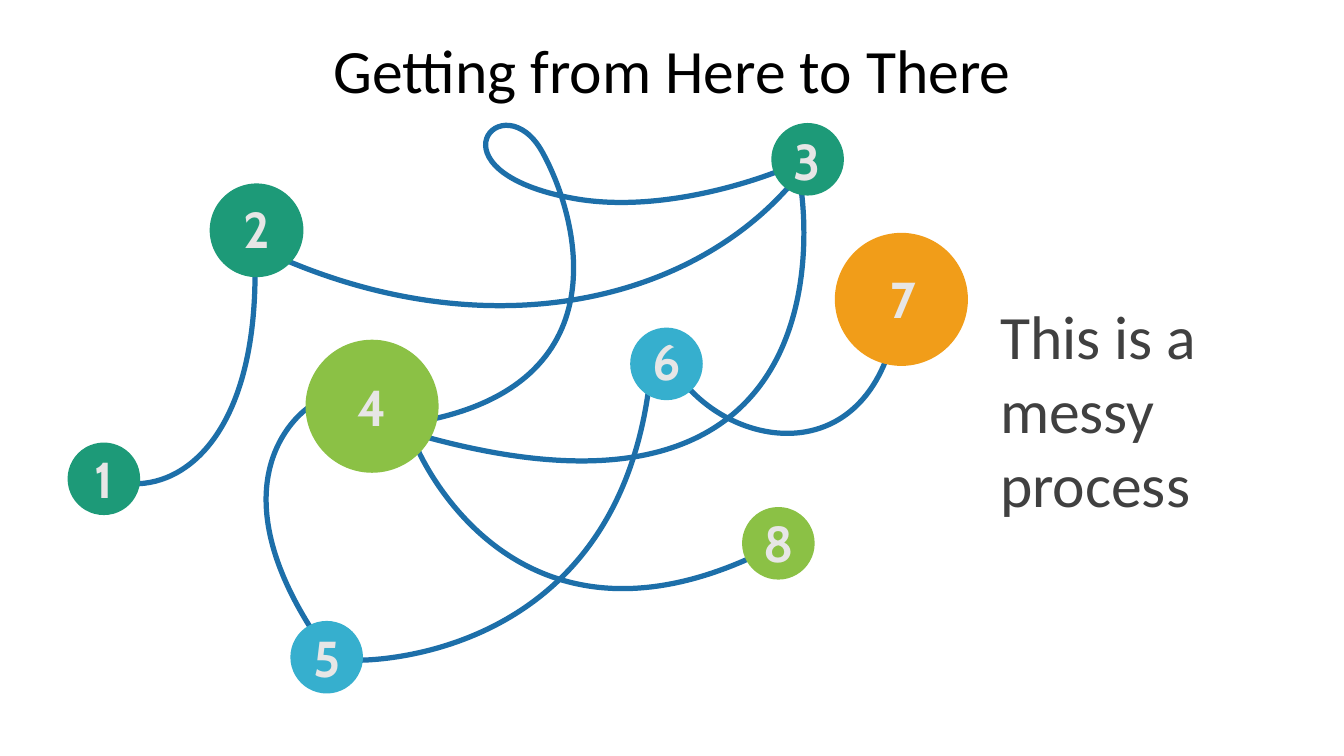
from lxml.etree import SubElement
from pptx import Presentation
from pptx.dml.color import RGBColor
from pptx.enum.shapes import MSO_SHAPE
from pptx.enum.text import MSO_ANCHOR, PP_ALIGN
from pptx.oxml.ns import qn
from pptx.util import Inches, Pt

TEAL, SKY, LIME, ORANGE = "1D9A78", "36AFCE", "8BC145", "F19D19"


def color(code):
    return RGBColor.from_string(code)


def add_text(bounds, text, font, size, code, align, bold=False):
    box = page.shapes.add_textbox(*map(Inches, bounds))
    box.text_frame.word_wrap = True
    box.text_frame.vertical_anchor = MSO_ANCHOR.MIDDLE
    para = box.text_frame.paragraphs[0]
    para.alignment = align
    span = para.add_run()
    span.text = text
    span.font.name = font
    span.font.size = Pt(size)
    span.font.bold = bold
    span.font.color.rgb = color(code)
    return box.text_frame


deck = Presentation()
deck.slide_width, deck.slide_height = Inches(13.33), Inches(7.5)
page = deck.slides.add_slide(deck.slide_layouts[6])

# Bounds of each route, then its start and two controls and an end per curve
routes = [
    ((4.12, 4.41, 3.39, 1.44), [(4.12, 4.41), (4.12, 4.41), (5.03, 6.68), (7.52, 5.5)]),
    ((4.24, 1.84, 3.74, 2.73), [(7.94, 1.84), (7.94, 1.84), (8.58, 5.52), (4.24, 4.34)]),
    ((2.76, 1.8, 5.11, 1.24), [(2.76, 2.55), (4.81, 3.45), (6.83, 3.03), (7.87, 1.8)]),
    ((1.32, 2.71, 1.21, 2.09), [(1.32, 4.8), (1.91, 4.81), (2.53, 4.2), (2.53, 2.71)]),
    ((4.28, 1.24, 3.47, 2.92), [(4.28, 4.16), (6.17, 3.75), (5.73, 2.14), (5.38, 1.51),
                                (4.99, 0.8), (4.19, 1.7), (5.7, 1.97),
                                (6.66, 2.14), (7.74, 1.69), (7.74, 1.69)]),
    ((2.64, 4.05, 0.48, 2.24), [(3.05, 4.05), (3.05, 4.05), (2.08, 4.7), (3.12, 6.29)]),
    ((6.83, 3.45, 2, 0.85), [(6.83, 3.85), (7.38, 4.45), (8.48, 4.57), (8.83, 3.45)]),
    ((3.54, 3.81, 2.9, 2.75), [(3.54, 6.55), (3.54, 6.55), (6.09, 6.61), (6.44, 3.81)]),
]
for (left, top, width, height), points in routes:
    # The diagonal sets the bounds; cubic curves then take its place
    builder = page.shapes.build_freeform(Inches(left), Inches(top))
    builder.add_line_segments([(Inches(left + width), Inches(top + height))], close=False)
    curve = builder.convert_to_shape()
    curve.shadow.inherit = False
    curve.fill.background()
    curve.line.color.rgb = color("1D6FA9")
    curve.line.width = Pt(3.75)
    outline = curve._element.find(".//" + qn("a:path"))
    for segment in list(outline):
        outline.remove(segment)
    for index, (x, y) in enumerate(points):
        if index == 0:
            segment = SubElement(outline, qn("a:moveTo"))
        elif index % 3 == 1:
            segment = SubElement(outline, qn("a:cubicBezTo"))
        SubElement(segment, qn("a:pt"), x=str(int(Inches(x - left))),
                   y=str(int(Inches(y - top))))

title = add_text((0.92, 0, 11.5, 1.45), "Getting from Here to There", "Calibri", 44,
                 "000000", PP_ALIGN.CENTER)
title.paragraphs[0].line_spacing = 0.9

# Number, circle left, top and size, fill, label bounds
stops = [
    ("1", 0.67, 4.39, 0.72, TEAL, (0.8, 4.5, 0.46, 0.5)),
    ("2", 2.08, 1.82, 0.93, TEAL, (2.27, 1.99, 0.56, 0.55)),
    ("3", 7.65, 1.22, 0.72, TEAL, (7.78, 1.34, 0.46, 0.5)),
    ("4", 3.03, 3.37, 1.32, LIME, (3.46, 3.78, 0.46, 0.5)),
    ("5", 2.88, 6.16, 0.72, SKY, (3.01, 6.27, 0.46, 0.5)),
    ("6", 6.25, 3.25, 0.72, SKY, (6.38, 3.33, 0.46, 0.5)),
    ("7", 8.28, 2.31, 1.32, ORANGE, (8.73, 2.71, 0.46, 0.5)),
    ("8", 7.36, 5.03, 0.72, LIME, (7.49, 5.13, 0.46, 0.5)),
]
for number, left, top, size, fill, label_bounds in stops:
    stop = page.shapes.add_shape(MSO_SHAPE.OVAL, Inches(left), Inches(top),
                                 Inches(size), Inches(size))
    stop.shadow.inherit = False
    stop.fill.solid()
    stop.fill.fore_color.rgb = color(fill)
    stop.line.fill.background()
    label = add_text(label_bounds, number, "Cabin", 36, "E7E6E6", PP_ALIGN.CENTER, bold=True)
    label.margin_left = label.margin_right = label.margin_top = label.margin_bottom = 0

add_text((9.82, 1.61, 3.12, 4.89), "This is a messy process", "Calibri", 44, "404040",
         PP_ALIGN.LEFT)

deck.save("out.pptx")
